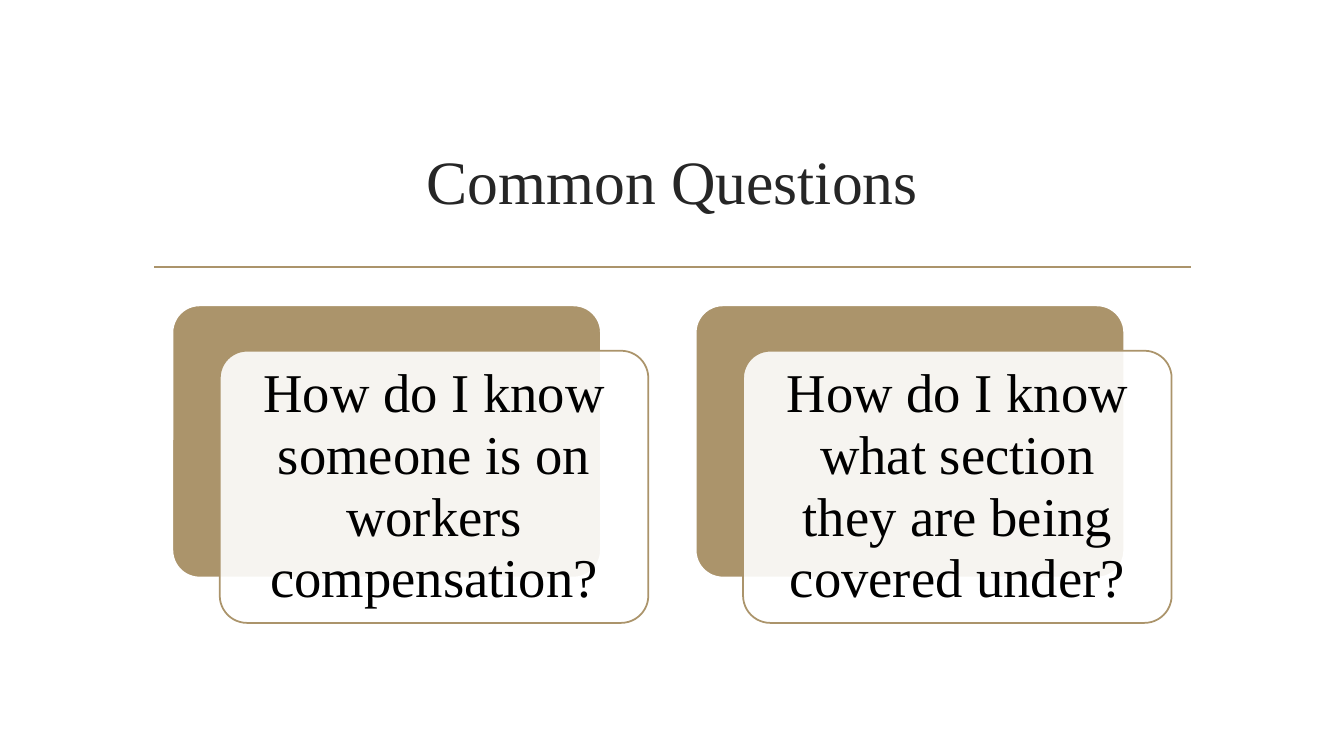
from lxml import etree
from pptx import Presentation
from pptx.dml.color import RGBColor
from pptx.enum.shapes import MSO_CONNECTOR, MSO_SHAPE
from pptx.enum.text import MSO_ANCHOR, PP_ALIGN
from pptx.oxml.ns import qn
from pptx.util import Inches, Pt

STRAIGHT = MSO_CONNECTOR.STRAIGHT
ROUNDED = MSO_SHAPE.ROUNDED_RECTANGLE
MIDDLE = MSO_ANCHOR.MIDDLE
CENTER = PP_ALIGN.CENTER

COLORS = {"tan": "AB946B", "white": "FFFFFF", "title": "262626", "black": "000000"}
FONT = "Times New Roman"
LINE_WIDTH = Pt(1.25)
CARD_WIDTH, CARD_HEIGHT = 4.25, 2.7
CARD_TOP = 3.03
CARD_LEFT, CARD_STEP = 1.71, 5.19
QUESTIONS = [
    "How do I know someone is on workers compensation?",
    "How do I know what section they are being covered under?",
]


def add_text(box, text, size, color, inset_x, inset_y, line_spacing):
    left, top, width, height = box
    shape = slide.shapes.add_textbox(Inches(left), Inches(top), Inches(width), Inches(height))
    frame_format = {
        "word_wrap": True,
        "vertical_anchor": MIDDLE,
        "margin_left": Inches(inset_x),
        "margin_right": Inches(inset_x),
        "margin_top": Inches(inset_y),
        "margin_bottom": Inches(inset_y),
    }
    for name, value in frame_format.items():
        setattr(shape.text_frame, name, value)
    paragraph = shape.text_frame.paragraphs[0]
    paragraph.alignment = CENTER
    paragraph.line_spacing = line_spacing
    run = paragraph.add_run()
    run.text = text
    for name, value in {"name": FONT, "size": Pt(size)}.items():
        setattr(run.font, name, value)
    run.font.color.rgb = RGBColor.from_string(COLORS[color])


def add_card(left, top, fill, outline):
    shape = slide.shapes.add_shape(
        ROUNDED, Inches(left), Inches(top), Inches(CARD_WIDTH), Inches(CARD_HEIGHT)
    )
    shape.adjustments[0] = 0.1
    shape.shadow.inherit = False
    shape.fill.solid()
    shape.fill.fore_color.rgb = RGBColor.from_string(COLORS[fill])
    shape.line.color.rgb = RGBColor.from_string(COLORS[outline])
    shape.line.width = LINE_WIDTH
    return shape


presentation = Presentation()
presentation.slide_width = Inches(13.33)
presentation.slide_height = Inches(7.5)
slide = presentation.slides.add_slide(presentation.slide_layouts[6])

divider = slide.shapes.add_connector(
    STRAIGHT, Inches(1.53), Inches(2.65), Inches(11.81), Inches(2.65)
)
divider.line.color.rgb = RGBColor.from_string(COLORS["tan"])
divider.line.width = LINE_WIDTH
etree.SubElement(divider.element.spPr, qn("a:effectLst"))

add_text((1.42, 1.07, 10.5, 1.43), "Common Questions", 44, "title", 0.1, 0.05, 1.0)

for index, question in enumerate(QUESTIONS):
    left = CARD_LEFT + index * CARD_STEP
    add_card(left, CARD_TOP, "tan", "white")
    front = add_card(left + 0.47, CARD_TOP + 0.45, "white", "tan")
    fill_color = front.element.spPr.find(qn("a:solidFill")).find(qn("a:srgbClr"))
    etree.SubElement(fill_color, qn("a:alpha"), val="90000")
    question_box = (left + 0.55, CARD_TOP + 0.53, 4.09, 2.54)
    add_text(question_box, question, 39, "black", 0.16, 0.16, 0.94)

presentation.save("out.pptx")
